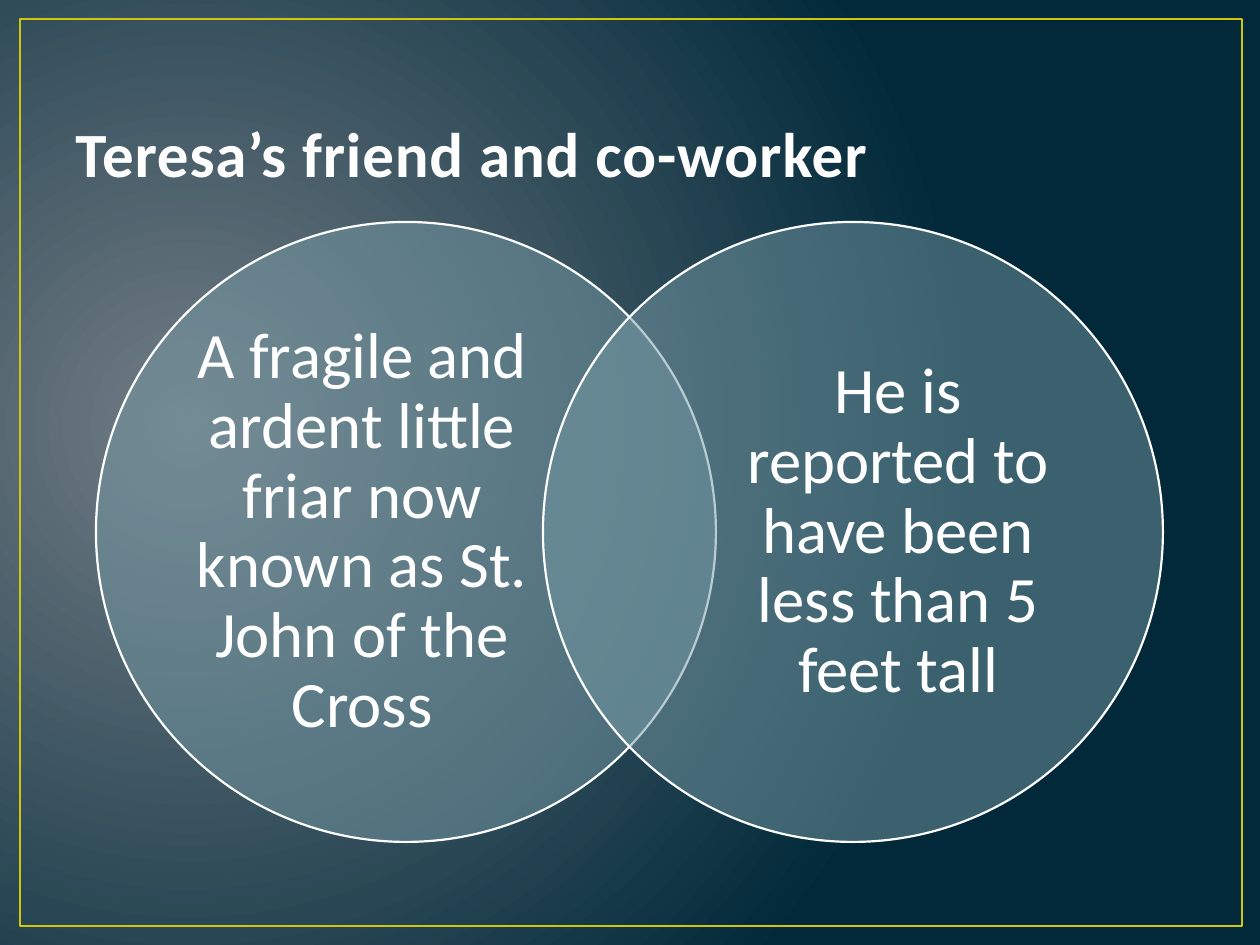
from lxml.etree import SubElement
from pptx import Presentation
from pptx.dml.color import RGBColor
from pptx.enum.shapes import MSO_SHAPE as Shape
from pptx.enum.text import MSO_ANCHOR as Anchor, PP_ALIGN as Align
from pptx.oxml.ns import qn
from pptx.util import Emu, Inches, Pt

WHITE = RGBColor(0xFF, 0xFF, 0xFF)
TITLE_WHITE = RGBColor(0xFE, 0xFE, 0xFE)
GOLD = RGBColor(0xCF, 0xC6, 0x0D)
TEAL = RGBColor(0x75, 0x9A, 0xA5)
GLOW = RGBColor(0x71, 0x7C, 0x84)
NAVY = RGBColor(0x01, 0x29, 0x3A)

PX = Inches(1) / 126


def px(*lengths):
    return [Emu(round(length * PX)) for length in lengths]


class VennSlide:
    font_name = "Calibri"

    def __init__(self, slide):
        self.slide = slide

    def background(self, inner, outer, focus):
        fill = self.slide.background.fill
        fill.gradient()
        for stop, color, position in zip(fill.gradient_stops, (inner, outer), (0, 1)):
            stop.color.rgb = color
            stop.position = position
        gradient = self.slide.element.find(".//" + qn("a:gradFill"))
        gradient.remove(gradient.find(qn("a:lin")))
        circle = SubElement(gradient, qn("a:path"), {"path": "circle"})
        SubElement(circle, qn("a:fillToRect"),
                   {side: str(percent * 1000) for side, percent in focus.items()})

    def outline(self, kind, box, color, width, fill=None, opacity=100):
        shape = self.slide.shapes.add_shape(kind, *px(*box))
        shape.shadow.inherit = False
        shape.line.color.rgb = color
        shape.line.width = Pt(width)
        if fill is None:
            shape.fill.background()
            return
        shape.fill.solid()
        shape.fill.fore_color.rgb = fill
        tint = shape.fill._xPr.find(".//" + qn("a:srgbClr"))
        SubElement(tint, qn("a:alpha"), {"val": str(opacity * 1000)})

    def text(self, words, box, color, size, frame_format, paragraph_format,
             bold=False, tracking=0):
        frame = self.slide.shapes.add_textbox(*px(*box)).text_frame
        paragraph = frame.paragraphs[0]
        run = paragraph.add_run()
        run.text = words
        font_format = {"name": self.font_name, "size": Pt(size), "bold": bold}
        for target, values in ((frame, {"word_wrap": True, **frame_format}),
                               (paragraph, paragraph_format),
                               (run.font, font_format)):
            for key, value in values.items():
                setattr(target, key, value)
        run.font.color.rgb = color
        if tracking:
            run.font._element.set("spc", str(tracking))


def main():
    deck = Presentation()
    deck.slide_width, deck.slide_height = Inches(10), Inches(7.5)
    venn = VennSlide(deck.slides.add_slide(deck.slide_layouts[6]))

    # Backdrop and frame
    venn.background(GLOW, NAVY, {"l": 15, "t": 50, "r": 85, "b": 60})
    venn.outline(Shape.RECTANGLE, (20, 19, 1222, 907), GOLD, 1.5)

    # Title
    venn.text("Teresa’s friend and co-worker", (63, 38, 1134, 158), TITLE_WHITE, 36,
              {"vertical_anchor": Anchor.BOTTOM}, {"alignment": Align.LEFT},
              bold=True, tracking=50)

    # Overlapping circles with their statements
    statement_frame = {"vertical_anchor": Anchor.MIDDLE, "margin_left": 0,
                       "margin_right": 0, "margin_top": 0, "margin_bottom": 0}
    statement_paragraph = {"alignment": Align.CENTER, "line_spacing": 0.9}
    statements = (
        ("A fragile and ardent little friar now known as St. John of the Cross", 96, 183),
        ("He is reported to have been less than 5 feet tall", 543, 719),
    )
    for statement, circle_left, text_left in statements:
        venn.outline(Shape.OVAL, (circle_left, 222, 620, 620), WHITE, 1.25, TEAL, 50)
        venn.text(statement, (text_left, 295, 358, 474), WHITE, 37,
                  statement_frame, statement_paragraph)

    deck.save("out.pptx")


if __name__ == "__main__":
    main()
